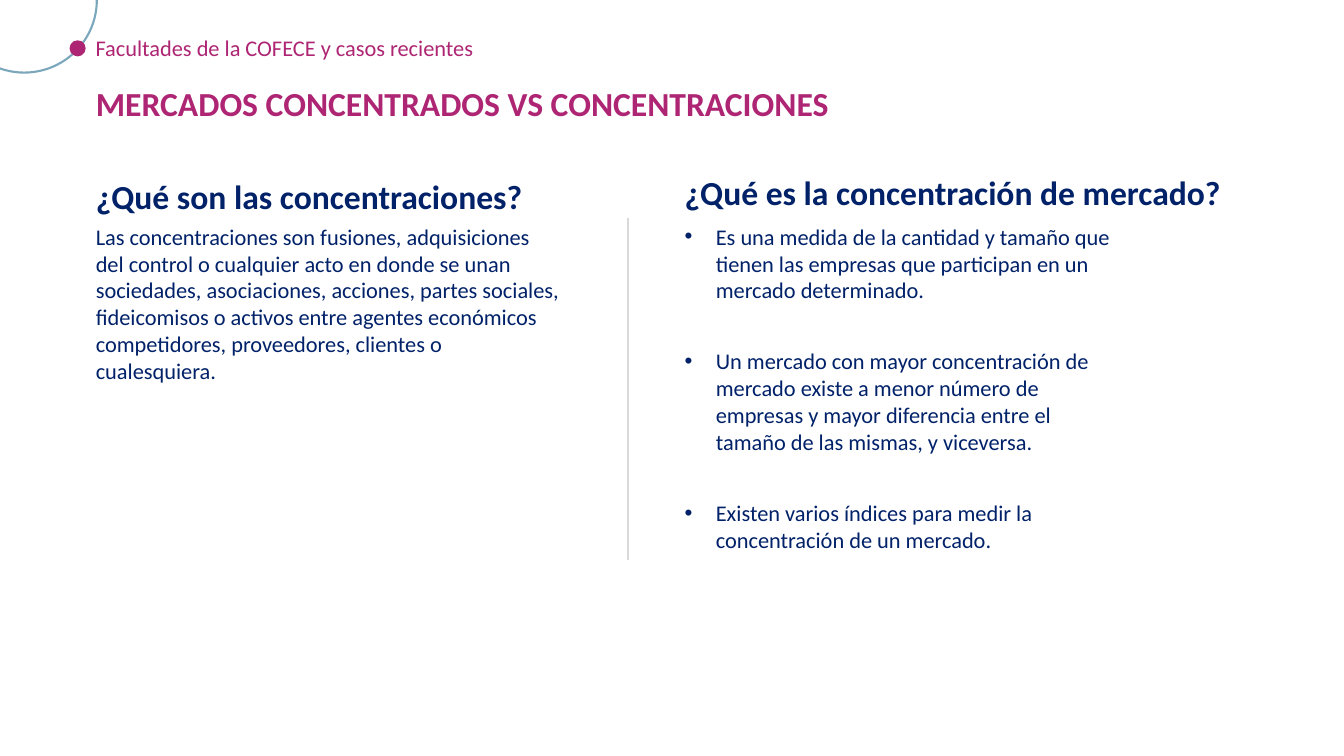
"""Slide comparing concentrated markets with concentrations."""
from lxml import etree
from pptx import Presentation
from pptx.dml.color import RGBColor
from pptx.enum.shapes import MSO_CONNECTOR, MSO_SHAPE
from pptx.enum.text import MSO_ANCHOR, MSO_AUTO_SIZE, PP_ALIGN
from pptx.oxml.ns import qn
from pptx.util import Inches, Pt

ARC, OVAL, STRAIGHT = MSO_SHAPE.ARC, MSO_SHAPE.OVAL, MSO_CONNECTOR.STRAIGHT
TOP, LEFT, GROW = MSO_ANCHOR.TOP, PP_ALIGN.LEFT, MSO_AUTO_SIZE.SHAPE_TO_FIT_TEXT
NAVY, MAGENTA, STEEL, GREY = "012169", "AE2573", "7BA7BC", "D9D9D9"
LEFT_COLUMN, RIGHT_COLUMN, DIVIDER = 0.85, 6.69, 6.23
BODY_TOP, BODY_BOTTOM = 2.16, 5.56


def color(hex_value):
    return RGBColor.from_string(hex_value)


def write(holder, box, lines, size, hue, bold=False, bulleted=False):
    holder.left, holder.top, holder.width, holder.height = map(Inches, box)
    frame = holder.text_frame
    frame.text = "\n".join(lines)
    frame.word_wrap, frame.auto_size, frame.vertical_anchor = True, GROW, TOP
    for paragraph in frame.paragraphs:
        properties = paragraph._p.get_or_add_pPr()
        indent = Inches(0.31) if bulleted else 0
        properties.set("marL", str(indent))
        properties.set("indent", str(-indent))
        if bulleted:
            etree.SubElement(properties, qn("a:buFont"), typeface="Arial")
            etree.SubElement(properties, qn("a:buChar"), char="•")
        else:
            etree.SubElement(properties, qn("a:buNone"))
        paragraph.alignment = LEFT
        paragraph.line_spacing = 1.0
        paragraph.space_before = Pt(0)
        paragraph.space_after = Pt(31.5 if bulleted else 0)
        for run in paragraph.runs:
            run.font.name, run.font.size, run.font.bold = "Calibri", Pt(size), bold
            run.font.color.rgb = color(hue)


presentation = Presentation()
presentation.slide_width, presentation.slide_height = Inches(13.33), Inches(7.5)
slide = presentation.slides.add_slide(presentation.slide_layouts[4])
title, left_heading, left_body, right_heading, right_body = list(slide.placeholders)[:5]
for footer in list(slide.placeholders)[5:]:
    footer._element.getparent().remove(footer._element)

corner_arc = slide.shapes.add_shape(ARC, Inches(-0.48), Inches(-0.72), Inches(1.44), Inches(1.44))
corner_arc.rotation = 225
corner_arc.adjustments[0], corner_arc.adjustments[1] = 80.19, 146.89
corner_arc.fill.background()
corner_arc.line.color.rgb = color(STEEL)
corner_arc.line.width = Pt(1.5)
corner_arc.shadow.inherit = False

section_dot = slide.shapes.add_shape(OVAL, Inches(0.69), Inches(0.4), Inches(0.16), Inches(0.16))
section_dot.fill.solid()
section_dot.fill.fore_color.rgb = color(MAGENTA)
section_dot.line.fill.background()
section_dot.shadow.inherit = False

divider = slide.shapes.add_connector(
    STRAIGHT, Inches(DIVIDER), Inches(BODY_TOP), Inches(DIVIDER), Inches(BODY_BOTTOM))
divider.line.color.rgb = color(GREY)
divider.line.width = Pt(1.5)
etree.SubElement(divider._element.spPr, qn("a:effectLst"))

section = slide.shapes.add_textbox(0, 0, 0, 0)
write(section, (LEFT_COLUMN, 0.29, 6.67, 0.37),
      ["Facultades de la COFECE y casos recientes"], 16, MAGENTA)
write(title, (LEFT_COLUMN, 0.77, 10.86, 0.5),
      ["MERCADOS CONCENTRADOS VS CONCENTRACIONES"], 24, MAGENTA, bold=True)

write(left_heading, (LEFT_COLUMN, 1.69, 4.89, 0.91),
      ["¿Qué son las concentraciones?"], 24, NAVY, bold=True)
write(left_body, (LEFT_COLUMN, BODY_TOP, 4.81, 1.72), [
    "Las concentraciones son fusiones, adquisiciones del control o cualquier acto en donde "
    "se unan sociedades, asociaciones, acciones, partes sociales, fideicomisos o activos "
    "entre agentes económicos competidores, proveedores, clientes o cualesquiera."], 16, NAVY)

write(right_heading, (RIGHT_COLUMN, 1.66, 5.7, 0.5),
      ["¿Qué es la concentración de mercado?"], 24, NAVY, bold=True)
write(right_body, (RIGHT_COLUMN, BODY_TOP, 4.5, BODY_BOTTOM - BODY_TOP), [
    "Es una medida de la cantidad y tamaño que tienen las empresas que participan en un "
    "mercado determinado.",
    "Un mercado con mayor concentración de mercado existe a menor número de empresas y "
    "mayor diferencia entre el tamaño de las mismas, y viceversa.",
    "Existen varios índices para medir la concentración de un mercado."],
    16, NAVY, bulleted=True)

presentation.save("out.pptx")
